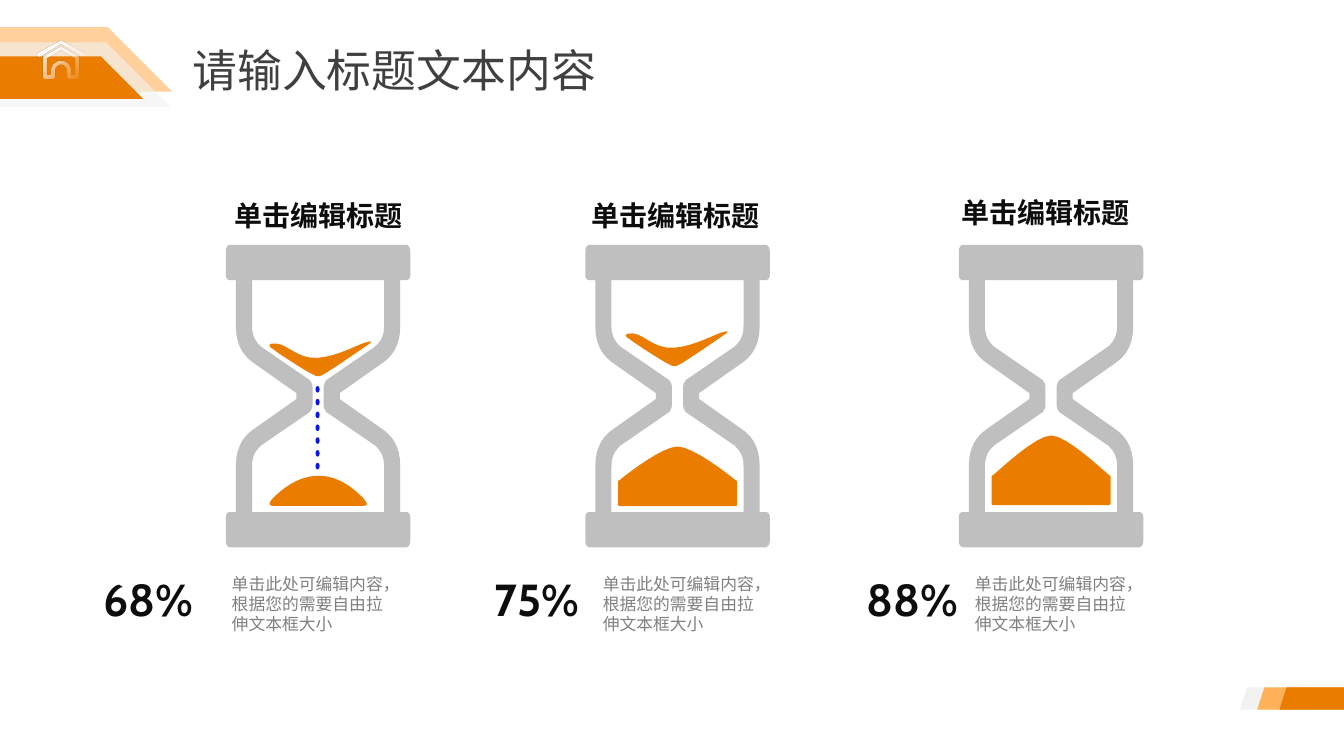
"""Build a slide with three hourglasses, each with a heading, a share and a caption."""
from lxml.etree import SubElement
from pptx import Presentation
from pptx.dml.color import RGBColor
from pptx.enum.shapes import MSO_SHAPE
from pptx.enum.text import MSO_AUTO_SIZE as Fit, PP_ALIGN as Align
from pptx.oxml.ns import qn
from pptx.util import Inches, Pt

WIDTH, HEIGHT = 13.33, 7.5
COLOURS = {"orange": "EA7C00", "peach": "FFB159", "pale": "F2F2F2", "glass": "BFBFBF",
           "drop": "0914E5", "title": "404040", "ink": "0D0D0D", "grey": "808080",
           "white": "FFFFFF"}

TITLE = "请输入标题文本内容"
HEADING = "单击编辑标题"
CAPTION = "单击此处可编辑内容，根据您的需要自由拉伸文本框大小"
HOURGLASSES = [
    {"centre": 3.155, "heading": (2.16, 1.93), "caption": 2.2,
     "share": "68%", "share_box": (0.93, 1.15), "top_sand": (0.03, 0.1), "drops": 7},
    {"centre": 6.72, "heading": (5.7, 1.93), "caption": 5.88,
     "share": "75%", "share_box": (4.81, 1.13), "top_sand": (0, 0), "mound": (4.43, 4.76, 5.02)},
    {"centre": 10.425, "heading": (9.37, 1.9), "caption": 9.57,
     "share": "88%", "share_box": (8.5, 1.16), "mound": (4.32, 4.71, 5.01)},
]
BANNER = [("peach", 0.27, 1.07, 0.64, 60), ("pale", 0.42, 1.05, 0.64, 60),
          ("orange", 0.56, 1.0, 0.42, 100)]
CORNER = [("pale", 12.3), ("peach", 12.47), ("orange", 12.69)]
CORNER_TOP, CORNER_BOTTOM, CORNER_SLANT = 6.82, 7.04, 0.07

FORMATS = {
    "title": {"size": Pt(32), "name": "Roboto", "bold": False},
    "heading": {"size": Pt(20), "name": "Cabin", "bold": True},
    "share": {"size": Pt(32), "name": "Cabin", "bold": True},
    "caption": {"size": Pt(12), "name": "Cabin", "bold": False},
}

MIDDLE = 3.93
OUTER_QUARTER = [
    (0.215, -0.03), (0.655, -0.34), (0.705, -0.38, 0.815, -0.47, 0.815, -0.69),
    (0.815, -1.15), (0.875, -1.15), (0.895, -1.15, 0.915, -1.17, 0.915, -1.2),
    (0.915, -1.44), (0.915, -1.47, 0.895, -1.5, 0.875, -1.5)]
INNER_QUARTER = [
    (0.055, -0.08), (0.055, -0.11, 0.065, -0.14, 0.085, -0.16), (0.565, -0.49),
    (0.595, -0.52, 0.655, -0.57, 0.655, -0.69), (0.655, -1.15)]
TOP_SAND = [
    (0.48, 3.31), (0.48, 3.31, 0.52, 3.28, 0.47, 3.29), (0.37, 3.31, 0.19, 3.43, -0.03, 3.45),
    (-0.25, 3.47, -0.35, 3.28, -0.49, 3.31), (-0.52, 3.32, -0.52, 3.34, -0.48, 3.36),
    (-0.45, 3.39, -0.14, 3.59, -0.09, 3.61), (-0.04, 3.64, -0.02, 3.64, 0.03, 3.61),
    (0.09, 3.58, 0.48, 3.31, 0.48, 3.31)]
DOME = [
    (-0.455, 4.95), (-0.485, 4.99, -0.505, 5.02, -0.425, 5.02), (0.425, 5.02),
    (0.515, 5.02, 0.485, 4.99, 0.445, 4.94), (0.365, 4.86, 0.215, 4.72, 0.005, 4.72),
    (-0.205, 4.72, -0.365, 4.86, -0.455, 4.95)]
HOUSE_CENTRE = 0.605
HOUSE_HALVES = [
    [(0, 0.4), (0.22, 0.52), (0.23, 0.53, 0.24, 0.54, 0.235, 0.55),
     (0.23, 0.56, 0.22, 0.57, 0.2, 0.56), (0, 0.44)],
    [(0, 0.46), (0.17, 0.56), (0.18, 0.57), (0.18, 0.76), (0.18, 0.77, 0.17, 0.78, 0.16, 0.78),
     (0.08, 0.78), (0.07, 0.78, 0.06, 0.77, 0.06, 0.76), (0.06, 0.7),
     (0.06, 0.67, 0.03, 0.64, 0, 0.64)],
    [(0, 0.5), (0.14, 0.58), (0.14, 0.74), (0.1, 0.74), (0.1, 0.7),
     (0.1, 0.64, 0.05, 0.6, 0, 0.6)]]


def trace(steps, parts=8):
    """Turn lines (2 numbers) and Bézier curves (6 numbers) into points."""
    points = []
    for step in steps:
        if len(step) == 2:
            points.append(step)
            continue
        (x0, y0), (x1, y1, x2, y2, x3, y3) = points[-1], step
        for t in (i / parts for i in range(1, parts + 1)):
            a, b, c, d = (1 - t) ** 3, 3 * t * (1 - t) ** 2, 3 * t * t * (1 - t), t ** 3
            points.append((a * x0 + b * x1 + c * x2 + d * x3,
                           a * y0 + b * y1 + c * y2 + d * y3))
    return points


def mirrored(half):
    return half + [(-x, y) for x, y in reversed(half)]


def hourglass_outline(quarter):
    upper = mirrored(trace(quarter))
    return upper + [(x, -y) for x, y in reversed(upper)]


def mound_outline(peak, shoulder, base):
    return mirrored(trace([
        (0, peak), (0.15, peak, 0.5, shoulder - 0.06, 0.57, shoulder),
        (0.59, shoulder + 0.01, 0.59, shoulder + 0.01, 0.59, shoulder + 0.03),
        (0.59, base - 0.02), (0.59, base, 0.58, base, 0.57, base)]))


def set_alpha(colour_element, percent):
    SubElement(colour_element, qn("a:alpha")).set("val", str(percent * 1000))


def paint(shape, colour, opacity=100):
    shape.shadow.inherit = False
    shape.line.fill.background()
    shape.fill.solid()
    shape.fill.fore_color.rgb = RGBColor.from_string(COLOURS[colour])
    if opacity < 100:
        set_alpha(shape.element.spPr.find(".//" + qn("a:srgbClr")), opacity)
    return shape


def draw(slide, contours, colour, dx=0, dy=0, opacity=100):
    builder = None
    for contour in contours:
        start, *rest = [(Inches(x + dx), Inches(y + dy)) for x, y in contour]
        if builder is None:
            builder = slide.shapes.build_freeform(*start)
        else:
            builder.move_to(*start)
        builder.add_line_segments(rest, close=True)
    return paint(builder.convert_to_shape(), colour, opacity)


def write(slide, text, box, part, colour, align=Align.LEFT, before=0, **frame_format):
    frame = slide.shapes.add_textbox(*map(Inches, box)).text_frame
    for key, value in {"word_wrap": True, **frame_format}.items():
        setattr(frame, key, value)
    paragraph = frame.paragraphs[0]
    paragraph.alignment = align
    paragraph.space_before = Pt(before)
    run = paragraph.add_run()
    run.text = text
    for key, value in FORMATS[part].items():
        setattr(run.font, key, value)
    run.font.color.rgb = RGBColor.from_string(COLOURS[colour])


def draw_header(slide):
    for colour, top, reach, drop, opacity in BANNER:
        draw(slide, [[(0, top), (reach, top), (reach + drop, top + drop), (0, top + drop)]],
             colour, opacity=opacity)
    write(slide, TITLE, (1.81, 0.37, 4.51, 0.64), "title", "title", Align.JUSTIFY,
          auto_size=Fit.SHAPE_TO_FIT_TEXT)
    house = draw(slide, [mirrored(trace(half)) for half in HOUSE_HALVES], "white", HOUSE_CENTRE)
    house.fill.gradient()
    house.fill.gradient_angle = 315
    for stop, position in zip(house.fill.gradient_stops, (0.1, 1)):
        stop.position = position
        stop.color.rgb = RGBColor.from_string(COLOURS["white"])
    set_alpha(house.element.spPr.findall(".//" + qn("a:srgbClr"))[-1], 0)


def draw_corner(slide):
    for colour, left in CORNER:
        draw(slide, [[(WIDTH, CORNER_BOTTOM), (left, CORNER_BOTTOM),
                      (left + CORNER_SLANT, CORNER_TOP), (WIDTH, CORNER_TOP)]], colour)


def draw_hourglass(slide, glass):
    centre = glass["centre"]
    draw(slide, [hourglass_outline(OUTER_QUARTER), hourglass_outline(INNER_QUARTER)],
         "glass", centre, MIDDLE)
    if "top_sand" in glass:
        shift, fall = glass["top_sand"]
        draw(slide, [trace(TOP_SAND)], "orange", centre + shift, fall)
    bottom_sand = mound_outline(*glass["mound"]) if "mound" in glass else trace(DOME)
    draw(slide, [bottom_sand], "orange", centre)
    for i in range(glass.get("drops", 0)):
        box = map(Inches, (centre - 0.025, 3.83 + i * 0.127, 0.04, 0.065))
        paint(slide.shapes.add_shape(MSO_SHAPE.OVAL, *box), "drop")
    write(slide, HEADING, (*glass["heading"], 2, 0.44), "heading", "ink", Align.CENTER,
          margin_left=Inches(0.08), margin_right=Inches(0.08),
          margin_top=Inches(0.04), margin_bottom=Inches(0.04))
    write(slide, CAPTION, (glass["caption"], 5.64, 1.82, 0.71), "caption", "grey",
          before=2.4, auto_size=Fit.SHAPE_TO_FIT_TEXT)
    left, width = glass["share_box"]
    write(slide, glass["share"], (left, 5.62, width, 0.64), "share", "ink",
          word_wrap=False, auto_size=Fit.SHAPE_TO_FIT_TEXT)


def main():
    deck = Presentation()
    deck.slide_width, deck.slide_height = Inches(WIDTH), Inches(HEIGHT)
    slide = deck.slides.add_slide(deck.slide_layouts[6])
    draw_header(slide)
    draw_corner(slide)
    for glass in HOURGLASSES:
        draw_hourglass(slide, glass)
    deck.save("out.pptx")


if __name__ == "__main__":
    main()
